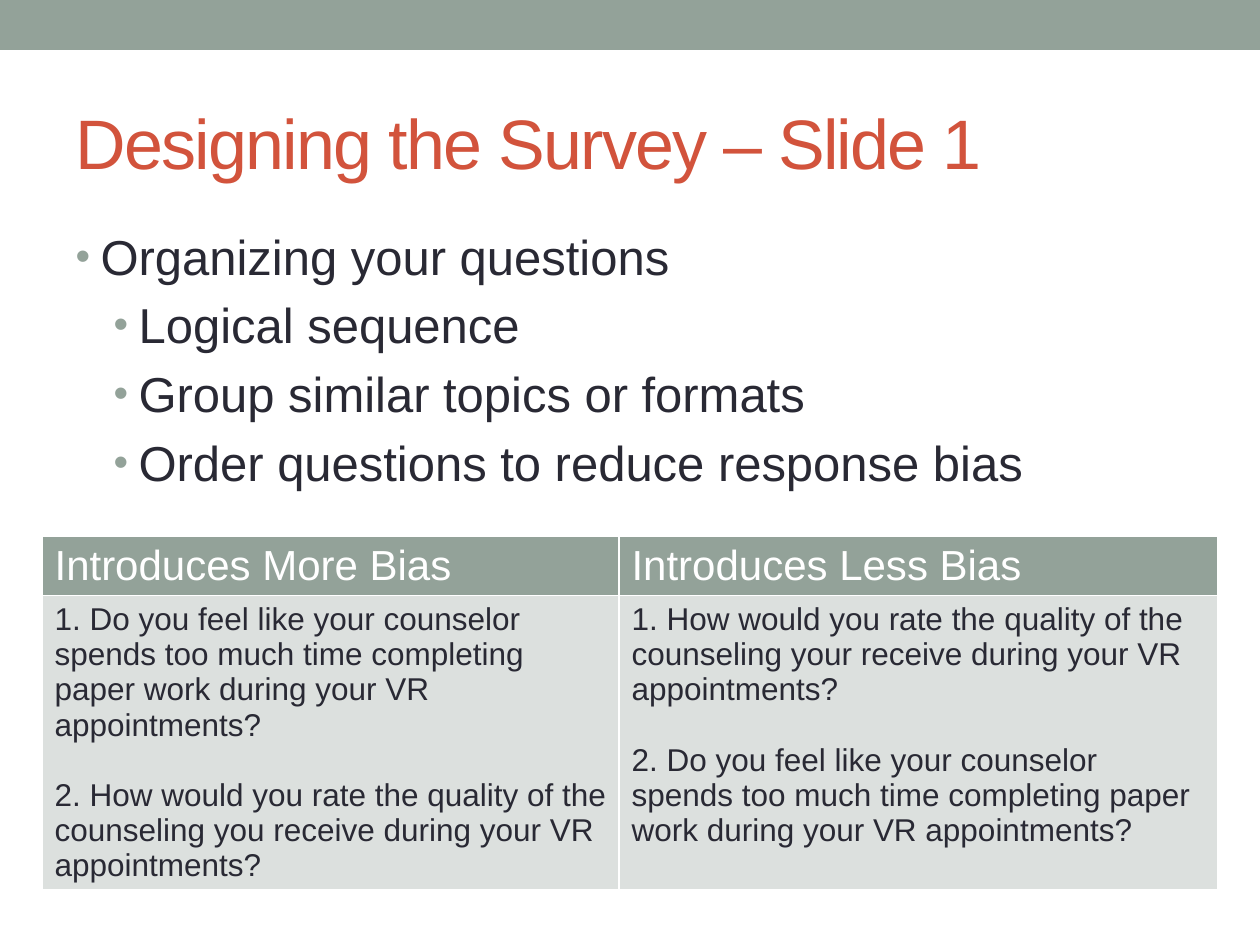
"""Build the survey design slide with its bullet list and bias comparison table."""
from lxml import etree
from pptx import Presentation, util as u
from pptx.dml.color import RGBColor
from pptx.enum import shapes, text
from pptx.oxml.ns import qn

SCALE = 914400 / 126
SAGE, RUST, INK, PALE, WHITE = "93A299", "D2533C", "292934", "DCE0DE", "FFFFFF"


def px(*lengths):
    return [u.Emu(round(length * SCALE)) for length in lengths]


def paint(target, color):
    if hasattr(target, "solid"):
        target.solid()
        target.fore_color.rgb = RGBColor.from_string(color)
    else:
        target.color.rgb = RGBColor.from_string(color)


presentation = Presentation()
presentation.slide_width, presentation.slide_height = px(1260, 945)
slide = presentation.slides.add_slide(presentation.slide_layouts[1])

band = slide.shapes.add_shape(shapes.MSO_SHAPE.RECTANGLE, *px(0, 0, 1260, 50))
band.shadow.inherit = False
paint(band.fill, SAGE)
band.line.fill.background()

title, body = slide.placeholders
title.left, title.top, title.width, title.height = px(63, 73, 1134, 136)
title.text_frame.text = "Designing the Survey – Slide 1"
title.text_frame.vertical_anchor = text.MSO_ANCHOR.MIDDLE
title.text_frame.auto_size = text.MSO_AUTO_SIZE.NONE
paragraph = title.text_frame.paragraphs[0]
paragraph.alignment = text.PP_ALIGN.LEFT
paragraph.font.size, paragraph.font.name = u.Pt(40), "Arial"
paint(paragraph.font, RUST)
paragraph.runs[0].font._element.set("spc", "-100")

body.left, body.top, body.width, body.height = px(63, 220, 1134, 346)
body.text_frame.auto_size = text.MSO_AUTO_SIZE.NONE
body.text_frame.text = "\n".join([
    "Organizing your questions",
    "Logical sequence",
    "Group similar topics or formats",
    "Order questions to reduce response bias",
])
for index, paragraph in enumerate(body.text_frame.paragraphs):
    paragraph.level = min(index, 1)
    properties = paragraph._p.get_or_add_pPr()
    indent, = px(25)
    margin, = px(63 if paragraph.level else 25)
    properties.set("marL", str(margin))
    properties.set("indent", str(-indent))
    bullet_color = etree.SubElement(properties, qn("a:buClr"))
    etree.SubElement(bullet_color, qn("a:srgbClr"), val=SAGE)
    etree.SubElement(properties, qn("a:buSzPct"), val="85000")
    etree.SubElement(properties, qn("a:buFont"), typeface="Arial")
    etree.SubElement(properties, qn("a:buChar"), char="•")
    paragraph.font.size, paragraph.font.name = u.Pt(28), "Arial"
    paint(paragraph.font, INK)

counselor = "Do you feel like your counselor spends too much time completing paper work during your VR appointments?"
quality = "How would you rate the quality of the counseling {} receive during your VR appointments?"
rows = [
    ["Introduces More Bias", "Introduces Less Bias"],
    [f"1. {counselor}\n2. {quality.format('you')}", f"1. {quality.format('your')}\n2. {counselor}"],
]
styles = [(24, WHITE, SAGE), (18, INK, PALE)]
table = slide.shapes.add_table(2, 2, *px(42, 536, 1176, 353)).table
for column, width in zip(table.columns, px(577, 599)):
    column.width = width
for row, height in zip(table.rows, px(59, 294)):
    row.height = height
for row, contents, (size, color, fill) in zip(table.rows, rows, styles):
    for cell, content in zip(row.cells, contents):
        cell.text = content
        paint(cell.fill, fill)
        for index, paragraph in enumerate(cell.text_frame.paragraphs):
            paragraph.space_before = u.Pt(20 * index)
            paragraph.font.size, paragraph.font.name = u.Pt(size), "Arial"
            paragraph.font.bold = False
            paint(paragraph.font, color)

presentation.save("out.pptx")
